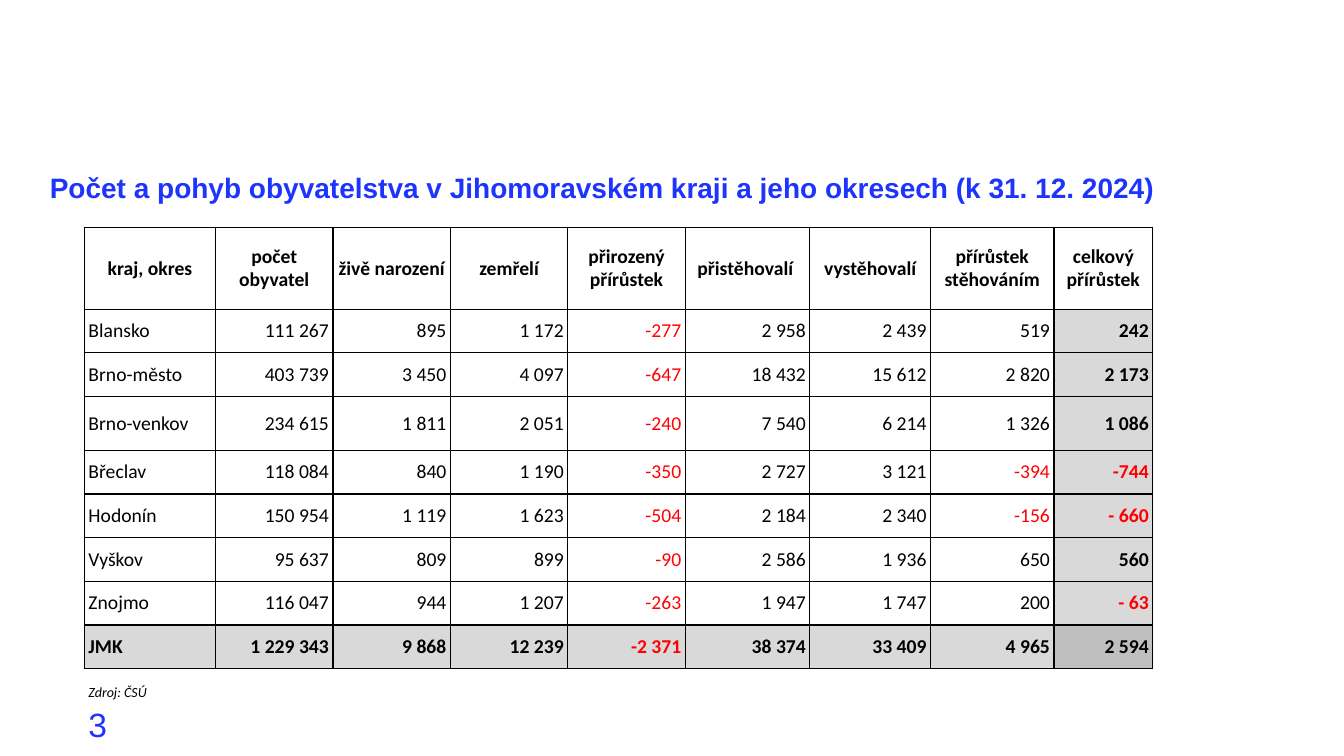
from pptx import Presentation
from pptx.dml.color import RGBColor
from pptx.enum.text import MSO_ANCHOR, PP_ALIGN
from pptx.oxml import parse_xml
from pptx.oxml.ns import nsdecls
from pptx.util import Cm, Pt

BLUE, BLACK, RED = "1D34FD", "000000", "FF0000"
LIGHT_GREY, GREY = "D9D9D9", "BFBFBF"
NO_STYLE = "{2D5ABB26-0587-4C30-8999-92F81FD0307C}"

HEADERS = ["kraj, okres", "počet obyvatel", "živě narození", "zemřelí",
           "přirozený přírůstek", "přistěhovalí ", "vystěhovalí",
           "přírůstek stěhováním", "celkový přírůstek"]
DISTRICTS = [
    ["Blansko", "111 267", "895", "1 172", "-277", "2 958", "2 439", "519", "242"],
    ["Brno-město", "403 739", "3 450", "4 097", "-647", "18 432", "15 612", "2 820", "2 173"],
    ["Brno-venkov", "234 615", "1 811", "2 051", "-240", "7 540", "6 214", "1 326", "1 086"],
    ["Břeclav", "118 084", "840", "1 190", "-350", "2 727", "3 121", "-394", "-744"],
    ["Hodonín", "150 954", "1 119", "1 623", "-504", "2 184", "2 340", "-156", "- 660"],
    ["Vyškov", "95 637", "809", "899", "-90", "2 586", "1 936", "650", "560"],
    ["Znojmo", "116 047", "944", "1 207", "-263", "1 947", "1 747", "200", "- 63"],
]
TOTAL = ["JMK", "1 229 343", "9 868", "12 239", "-2 371", "38 374", "33 409", "4 965", "2 594"]
SOURCE = ["Zdroj: ČSÚ"] + [""] * 8
ROWS = [HEADERS, *DISTRICTS, TOTAL, SOURCE]
COL_WIDTHS = [3.3] + [2.96] * 4 + [3.14, 3.04, 3.11, 2.49]
ROW_HEIGHTS = [2.06, 1.1, 1.1, 1.36] + [1.1] * 5 + [0.81]


def rgb(color):
    return RGBColor.from_string(color)


def write(tf, text, size=14, font="Calibri", color=BLACK, bold=False,
          italic=False, align=PP_ALIGN.LEFT):
    p = tf.paragraphs[0]
    p.alignment = align
    r = p.add_run()
    r.text = text
    r.font.size, r.font.name = Pt(size), font
    r.font.bold, r.font.italic = bold, italic
    r.font.color.rgb = rgb(color)
    return p


def add_borders(cell, sides):
    tcPr = cell._tc.get_or_add_tcPr()
    for side in sides:
        tcPr.append(parse_xml(
            f'<a:ln{side} {nsdecls("a")} w="12700"><a:solidFill>'
            f'<a:srgbClr val="{BLACK}"/></a:solidFill></a:ln{side}>'))


def add_title(s, x, y, w, h):
    sp = s.shapes.title
    sp.left, sp.top, sp.width, sp.height = Cm(x), Cm(y), Cm(w), Cm(h)
    tf = sp.text_frame
    tf.word_wrap = True
    tf.vertical_anchor = MSO_ANCHOR.MIDDLE
    p = write(tf, "Počet a pohyb obyvatelstva v Jihomoravském kraji a jeho okresech "
              "(k 31. 12. 2024)", size=20, font="Arial", color=BLUE, bold=True)
    p.line_spacing = 0.9


def format_cell(cell, text, row, col):
    header, total, source = row == 0, row == len(ROWS) - 2, row == len(ROWS) - 1
    last = col == len(HEADERS) - 1
    cell.margin_left = cell.margin_right = Cm(0.1)
    cell.margin_top = cell.margin_bottom = 0
    cell.vertical_anchor = MSO_ANCHOR.BOTTOM if source else MSO_ANCHOR.MIDDLE
    add_borders(cell, "T" if source else "LRTB")

    # Summary row and column are shaded
    if source or header or not (total or last):
        cell.fill.background()
    else:
        cell.fill.solid()
        cell.fill.fore_color.rgb = rgb(GREY if total and last else LIGHT_GREY)

    if header:
        align = PP_ALIGN.CENTER
    else:
        align = PP_ALIGN.RIGHT if col else PP_ALIGN.LEFT
    if text:
        write(cell.text_frame, text, size=10 if source else 14, align=align,
              color=RED if text.startswith("-") else BLACK,
              bold=header or total or last, italic=source)


def add_population_table(s, x, y):
    frame = s.shapes.add_table(len(ROWS), len(HEADERS), Cm(x), Cm(y),
                               Cm(sum(COL_WIDTHS)), Cm(sum(ROW_HEIGHTS)))
    table = frame.table
    table.first_row = table.horz_banding = False
    table._tbl.tblPr[0].text = NO_STYLE
    for column, width in zip(table.columns, COL_WIDTHS):
        column.width = Cm(width)
    for i, (values, height) in enumerate(zip(ROWS, ROW_HEIGHTS)):
        table.rows[i].height = Cm(height)
        for j, text in enumerate(values):
            format_cell(table.cell(i, j), text, i, j)


def add_page_number(s, x, y, w, h):
    tf = s.shapes.add_textbox(Cm(x), Cm(y), Cm(w), Cm(h)).text_frame
    tf.word_wrap = True
    tf.vertical_anchor = MSO_ANCHOR.MIDDLE
    write(tf, "3", size=24, font="Arial", color=BLUE)


def main():
    prs = Presentation()
    prs.slide_width, prs.slide_height = Cm(33.87), Cm(19.05)
    s = prs.slides.add_slide(prs.slide_layouts[5])
    add_page_number(s, 1.98, 17.75, 7.62, 1.01)
    add_title(s, 1, 3.86, 30.38, 1.85)
    add_population_table(s, 2.13, 5.73)
    prs.save("out.pptx")


if __name__ == "__main__":
    main()
